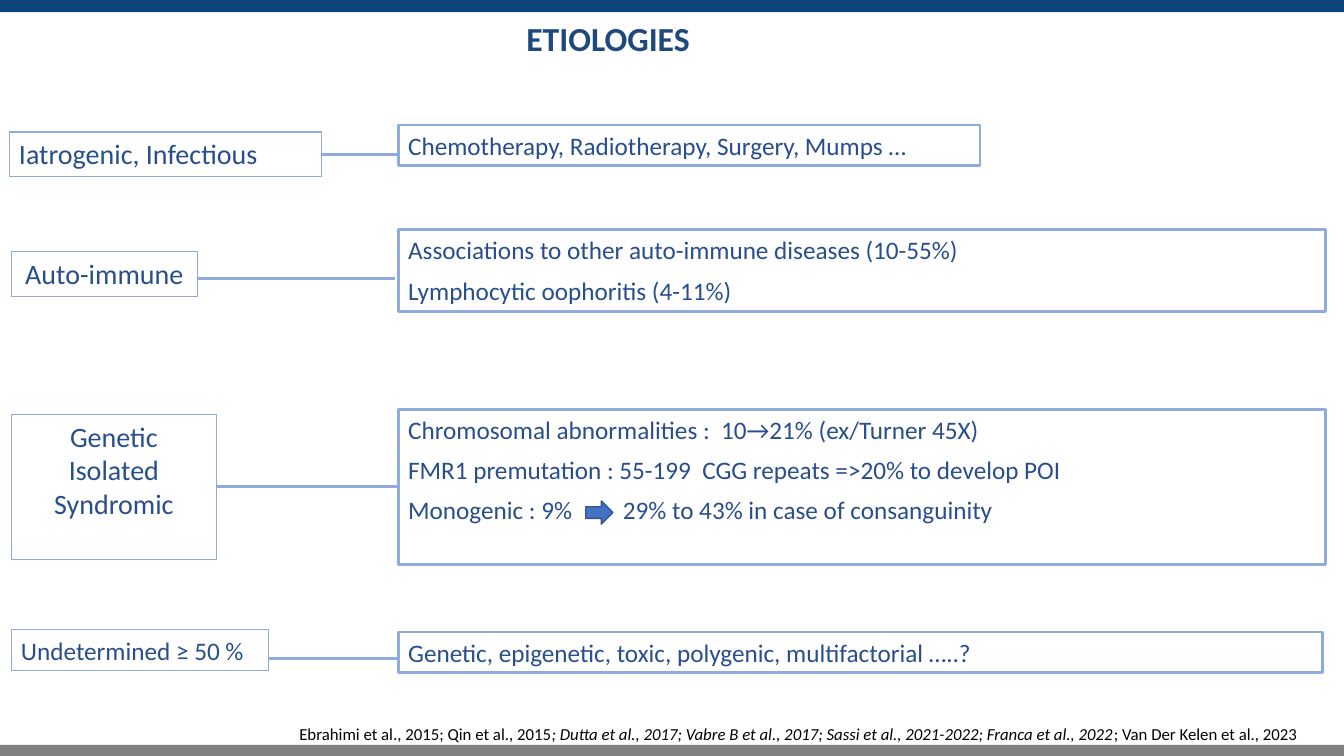
"""Build the slide on etiologies: four causes, each joined to its details."""
import pptx
import pptx.chart.data
import pptx.dml.color
import pptx.enum.shapes
import pptx.enum.text
import pptx.oxml.ns
import pptx.util
from lxml import etree

PX = 9144
COLORS = {
    "top": "0D457A", "bottom": "808080", "edge": "8FAADC", "text": "284E8D",
    "title": "1F497D", "black": "000000", "arrow": "4472C4", "arrow_edge": "325491",
}
SHAPE = pptx.enum.shapes.MSO_SHAPE
ALIGN = pptx.enum.text.PP_ALIGN


def write(tf, text, size=18, color="text", bold=False, align=ALIGN.LEFT,
          after=0, wrap=True, tab=None):
    """Fill a frame; text is a list of paragraphs, each a list of (text, italic) runs."""
    tf.word_wrap = wrap
    tf.auto_size = pptx.enum.text.MSO_AUTO_SIZE.NONE
    tf.vertical_anchor = pptx.enum.text.MSO_ANCHOR.TOP
    for i, runs in enumerate(text):
        p = tf.add_paragraph() if i else tf.paragraphs[0]
        p.alignment = align
        p.space_after = pptx.util.Pt(after)
        if tab and any("\t" in words for words, _ in runs):
            qn = pptx.oxml.ns.qn
            tabs = etree.SubElement(p._p.get_or_add_pPr(), qn("a:tabLst"))
            etree.SubElement(tabs, qn("a:tab"), pos=str(tab * PX), algn="l")
        for words, italic in runs:
            r = p.add_run()
            r.text = words
            r.font.name = "Calibri"
            r.font.size = pptx.util.Pt(size)
            r.font.bold = bold
            r.font.italic = italic
            r.font.color.rgb = pptx.dml.color.RGBColor.from_string(COLORS[color])


def add_box(shapes, at, kind=SHAPE.RECTANGLE, fill=None, line=None, width=1):
    """Add a preset shape at (left, top, width, height) in px."""
    sp = shapes.add_shape(kind, *[v * PX for v in at])
    sp.shadow.inherit = False
    if fill:
        sp.fill.solid()
        sp.fill.fore_color.rgb = pptx.dml.color.RGBColor.from_string(COLORS[fill])
    else:
        sp.fill.background()
    if line:
        sp.line.color.rgb = pptx.dml.color.RGBColor.from_string(COLORS[line])
        sp.line.width = pptx.util.Pt(width)
    else:
        sp.line.fill.background()
    return sp


prs = pptx.Presentation()
prs.slide_width, prs.slide_height = 1333 * PX, 750 * PX
s = prs.slides.add_slide(prs.slide_layouts[5])

for top, fill in ((0, "top"), (739, "bottom")):
    add_box(s.shapes, (0, top, 1333, 12), fill=fill)

title = s.shapes.title
title.left, title.top, title.width, title.height = [v * PX for v in (512, 13, 191, 50)]
write(title.text_frame, [[("ETIOLOGIES", False)]], size=24, color="title", bold=True, wrap=False)

# cause box, cause lines, size, alignment, detail box, detail lines, line y, line end, joined sides
rows = [
    ((9, 131, 310, 44), ["Iatrogenic, Infectious"], 20, ALIGN.LEFT,
     (395, 124, 577, 40), ["Chemotherapy, Radiotherapy, Surgery, Mumps …"],
     153, 395, "begin"),
    ((11, 250, 185, 44), ["Auto-immune"], 20, ALIGN.CENTER,
     (395, 228, 920, 81),
     ["Associations to other auto-immune diseases (10-55%)", "Lymphocytic oophoritis (4-11%)"],
     276, 392, ""),
    ((11, 411, 204, 144), ["Genetic", "Isolated", "Syndromic"], 20, ALIGN.CENTER,
     (395, 406, 920, 154),
     ["Chromosomal abnormalities :  10→21% (ex/Turner 45X)",
      "FMR1 premutation : 55-199  CGG repeats =>20% to develop POI",
      "Monogenic : 9%\t29% to 43% in case of consanguinity"],
     483, 395, "begin end"),
    ((11, 625, 255, 40), ["Undetermined ≥ 50 %"], 18, ALIGN.LEFT,
     (395, 627, 917, 40), ["Genetic, epigenetic, toxic, polygenic, multifactorial …..?"],
     653, 395, ""),
]
for cause_at, cause, size, align, detail_at, detail, y, end, joined in rows:
    left = add_box(s.shapes, cause_at, line="edge", width=0.75)
    write(left.text_frame, [[(words, False)] for words in cause], size=size, align=align)
    right = add_box(s.shapes, detail_at, line="edge", width=2)
    write(right.text_frame, [[(words, False)] for words in detail], after=7.2, tab=213)
    start = cause_at[0] + cause_at[2]
    link = s.shapes.add_connector(pptx.enum.shapes.MSO_CONNECTOR.STRAIGHT,
                                  start * PX, y * PX, end * PX, y * PX)
    if "begin" in joined:
        link.begin_connect(left, 3)
    if "end" in joined:
        link.end_connect(right, 1)
    link.line.color.rgb = pptx.dml.color.RGBColor.from_string(COLORS["edge"])
    link.line.width = pptx.util.Pt(2)
    etree.SubElement(link._element.spPr, pptx.oxml.ns.qn("a:effectLst"))

refs = s.shapes.add_textbox(*[v * PX for v in (287, 713, 1041, 30)])
write(refs.text_frame, [[
    ("Ebrahimi et al., 2015; Qin et al., 2015", False),
    ("; Dutta et al., 2017; Vabre B et al., 2017; Sassi et al., 2021-2022; Franca et al., 2022", True),
    ("; Van Der Kelen et al., 2023", False),
]], size=12, color="black")

add_box(s.shapes, (581, 497, 27, 23), SHAPE.RIGHT_ARROW, fill="arrow", line="arrow_edge")

prs.save("out.pptx")
